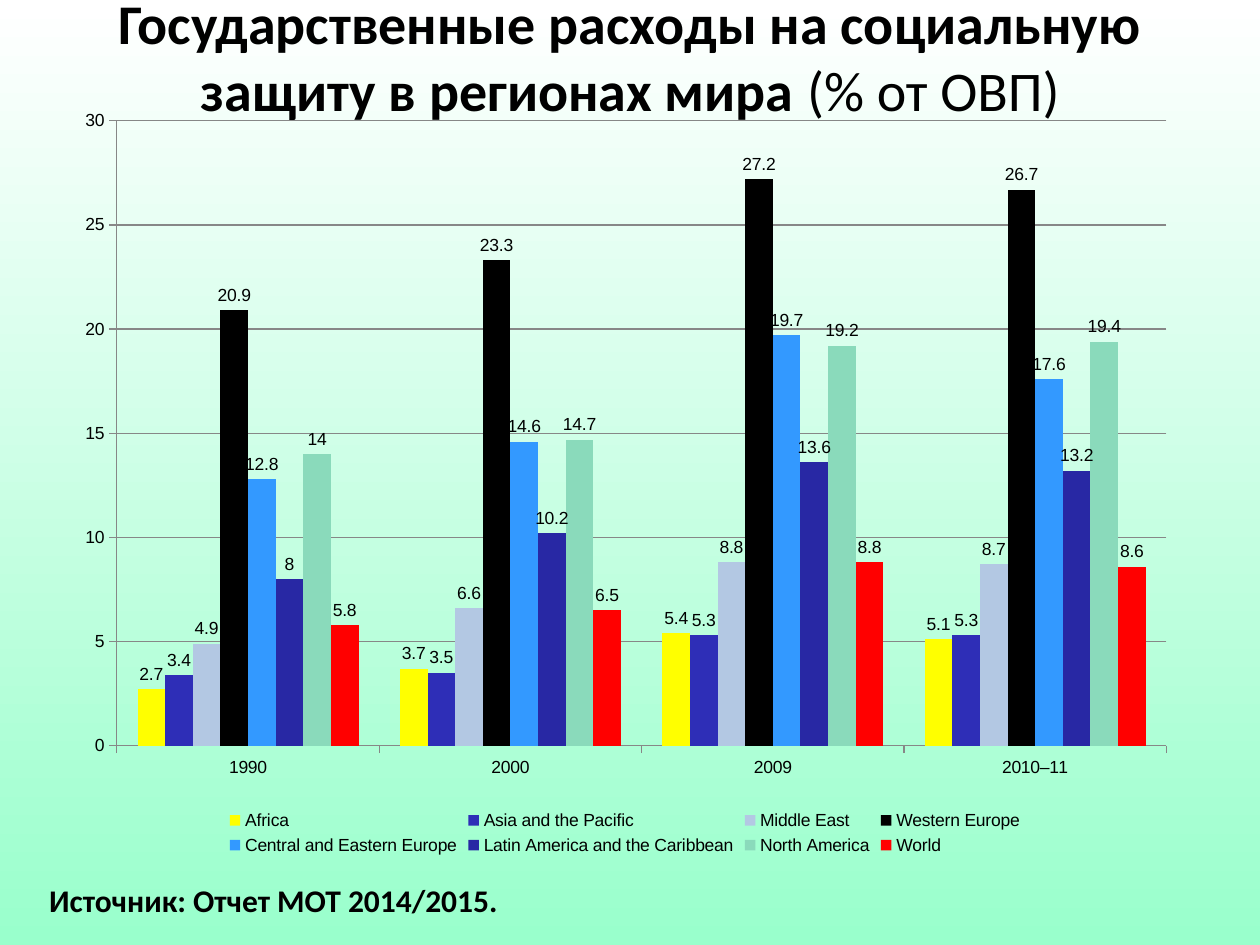
import pptx
import pptx.util
import pptx.dml.color
import pptx.chart.data
import pptx.enum.chart
import pptx.enum.text
import pptx.oxml

Pt = pptx.util.Pt
RGB = pptx.dml.color.RGBColor
Enum = pptx.enum.chart
Align = pptx.enum.text.PP_ALIGN
Anchor = pptx.enum.text.MSO_ANCHOR

BLACK = RGB(0x00, 0x00, 0x00)
WHITE = RGB(0xFF, 0xFF, 0xFF)
MINT = RGB(0x99, 0xFF, 0xCC)
GRAY = RGB(0x87, 0x87, 0x87)
YELLOW = RGB(0xFF, 0xFF, 0x00)
INDIGO = RGB(0x2E, 0x2E, 0xB7)
PALE = RGB(0xB3, 0xC8, 0xE3)
BLUE = RGB(0x33, 0x99, 0xFF)
NAVY = RGB(0x28, 0x28, 0xA4)
GREEN = RGB(0x8A, 0xDA, 0xBB)
RED = RGB(0xFF, 0x00, 0x00)

YEARS = ["1990", "2000", "2009", "2010–11"]
REGIONS = [
    ("Africa", YELLOW, (2.7, 3.7, 5.4, 5.1)),
    ("Asia and the Pacific", INDIGO, (3.4, 3.5, 5.3, 5.3)),
    ("Middle East", PALE, (4.9, 6.6, 8.8, 8.7)),
    ("Western Europe", BLACK, (20.9, 23.3, 27.2, 26.7)),
    ("Central and Eastern Europe", BLUE, (12.8, 14.6, 19.7, 17.6)),
    ("Latin America and the Caribbean", NAVY, (8, 10.2, 13.6, 13.2)),
    ("North America", GREEN, (14, 14.7, 19.2, 19.4)),
    ("World", RED, (5.8, 6.5, 8.8, 8.6)),
]


def add_run(para, text, size=18, bold=True, color=BLACK, font="Calibri"):
    run = para.add_run()
    run.text = text
    run.font.name = font
    run.font.size = Pt(size)
    run.font.bold = bold
    run.font.color.rgb = color


def add_box(slide, box, anchor, wrap=True):
    frame = slide.shapes.add_textbox(*map(Pt, box)).text_frame
    frame.word_wrap = wrap
    frame.vertical_anchor = anchor
    return frame.paragraphs[0]


def paint(slide):
    fill = slide.background.fill
    fill.gradient()
    fill.gradient_angle = 270
    for stop, color, place in zip(fill.gradient_stops, (WHITE, MINT), (0, 1)):
        stop.color.rgb = color
        stop.position = place


def add_title(slide, box):
    para = add_box(slide, box, Anchor.TOP)
    para.alignment = Align.CENTER
    add_run(para, "Государственные расходы на социальную защиту в регионах мира ", size=32)
    add_run(para, "(% от ОВП)", size=32, bold=False)


def add_source(slide, box):
    para = add_box(slide, box, Anchor.MIDDLE, wrap=False)
    add_run(para, "Источник: Отчет МОТ 2014/2015.")


def set_plot(chart, x, y, w, h):
    area = chart.plots[0]._element.getparent()
    for old in area.findall(pptx.oxml.ns.qn("c:layout")):
        area.remove(old)
    sizes = "".join(f'<c:{tag} val="{val}"/>' for tag, val in zip("xywh", (x, y, w, h)))
    area.insert(0, pptx.oxml.parse_xml(
        f'<c:layout {pptx.oxml.ns.nsdecls("c")}><c:manualLayout>'
        '<c:layoutTarget val="inner"/><c:xMode val="edge"/><c:yMode val="edge"/>'
        f'{sizes}</c:manualLayout></c:layout>'))


def set_line(line):
    line.color.rgb = GRAY
    line.width = Pt(0.75)


def add_chart(slide, box):
    data = pptx.chart.data.CategoryChartData()
    data.categories = YEARS
    for name, color, vals in REGIONS:
        data.add_series(name, vals)
    kind = Enum.XL_CHART_TYPE.COLUMN_CLUSTERED
    chart = slide.shapes.add_chart(kind, *map(Pt, box), data).chart
    chart.has_title = False
    chart.font.name = "Arial"
    chart.font.size = Pt(10)
    chart.font.color.rgb = BLACK
    chart.has_legend = True
    chart.legend.position = Enum.XL_LEGEND_POSITION.BOTTOM
    chart.legend.include_in_layout = False
    set_plot(chart, 0.05, 0.03, 0.93, 0.82)

    plot = chart.plots[0]
    plot.vary_by_categories = False
    plot.gap_width = 150
    plot.overlap = 0
    for series, (name, color, vals) in zip(plot.series, REGIONS):
        series.format.fill.solid()
        series.format.fill.fore_color.rgb = color
        series.invert_if_negative = False
        series.data_labels.show_value = True
        series.data_labels.position = Enum.XL_LABEL_POSITION.OUTSIDE_END

    for axis in (chart.category_axis, chart.value_axis):
        axis.major_tick_mark = Enum.XL_TICK_MARK.OUTSIDE
        axis.minor_tick_mark = Enum.XL_TICK_MARK.NONE
        set_line(axis.format.line)
    scale = chart.value_axis
    scale.minimum_scale = 0
    scale.maximum_scale = 30
    scale.major_unit = 5
    scale.has_major_gridlines = True
    set_line(scale.major_gridlines.format.line)


def main():
    deck = pptx.Presentation()
    deck.slide_width, deck.slide_height = Pt(720), Pt(540)
    slide = deck.slides.add_slide(deck.slide_layouts[6])
    paint(slide)
    add_title(slide, (28, -10, 664.5, 106))
    add_chart(slide, (34.5, 56, 645, 435.5))
    add_source(slide, (21, 499.5, 291.5, 29))
    deck.save("out.pptx")


if __name__ == "__main__":
    main()
